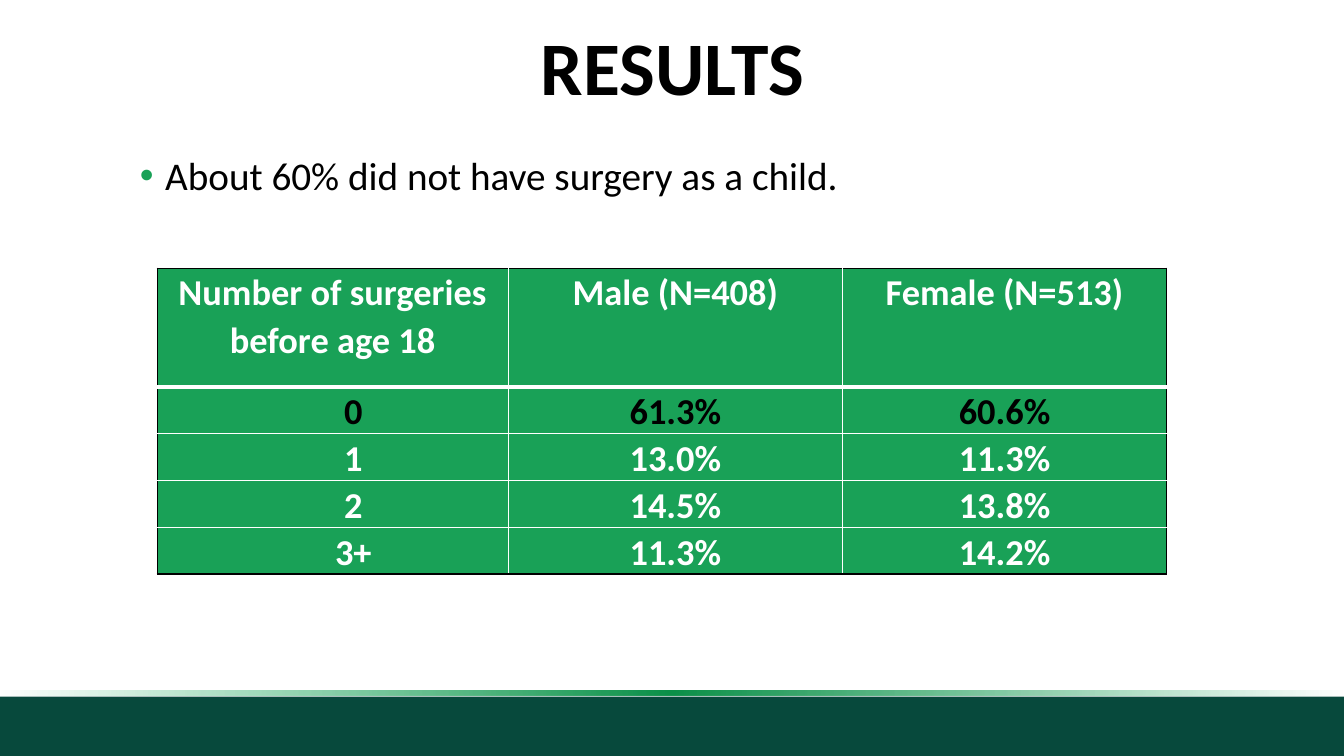
import pptx
import pptx.util
import pptx.dml.color
import pptx.enum.shapes
import pptx.enum.text
import pptx.oxml
import pptx.oxml.ns

Inches = pptx.util.Inches
Pt = pptx.util.Pt
NS = pptx.oxml.ns.nsdecls("a")
GREEN, BLACK, WHITE = "19A157", "000000", "FFFFFF"


def rgb(value):
    return pptx.dml.color.RGBColor.from_string(value)


def write(tf, text, size=28, color=BLACK, bold=False, align=None, spacing=0.9, bullet=None):
    p = tf.paragraphs[0]
    p.alignment = align
    p.line_spacing = spacing
    p.space_before = Pt(0)
    if bullet:
        pPr = p._p.get_or_add_pPr()
        pPr.set("marL", str(Inches(0.25)))
        pPr.set("indent", str(-Inches(0.25)))
        for xml in (f'<a:buClr {NS}><a:srgbClr val="{bullet}"/></a:buClr>',
                    f'<a:buFont {NS} typeface="Arial"/>',
                    f'<a:buChar {NS} char="•"/>'):
            pPr.append(pptx.oxml.parse_xml(xml))
    r = p.add_run()
    r.text = text
    r.font.name = "Calibri"
    r.font.size = Pt(size)
    r.font.bold = bold
    r.font.color.rgb = rgb(color)


prs = pptx.Presentation()
prs.slide_width = Inches(13.33)
prs.slide_height = Inches(7.5)
s = prs.slides.add_slide(prs.slide_layouts[5])
center = pptx.enum.text.PP_ALIGN.CENTER

# Footer band and the glowing strip above it
bands = []
for top, height in ((6.91, 0.59), (6.85, 0.05)):
    sp = s.shapes.add_shape(pptx.enum.shapes.MSO_SHAPE.RECTANGLE,
                            Inches(0), Inches(top), Inches(13.33), Inches(height))
    sp.shadow.inherit = False
    sp.line.fill.background()
    bands.append(sp)
footer, strip = bands
footer.fill.solid()
footer.fill.fore_color.rgb = rgb("07493C")
strip.fill.gradient()
strip.fill.gradient_angle = 180
stops = strip._element.spPr.find(pptx.oxml.ns.qn("a:gradFill")).find(pptx.oxml.ns.qn("a:gsLst"))
for stop in list(stops):
    stops.remove(stop)
for pos, color, alpha in ((0, "0D9D4F", 0), (50, "0C9049", 100), (100, "0FAB56", 0)):
    stops.append(pptx.oxml.parse_xml(
        f'<a:gs {NS} pos="{pos * 1000}"><a:srgbClr val="{color}">'
        f'<a:alpha val="{alpha * 1000}"/></a:srgbClr></a:gs>'))

# Title
title = s.shapes.title
title.left, title.top = Inches(0.92), Inches(0.11)
title.width, title.height = Inches(11.5), Inches(1.19)
title.text_frame.vertical_anchor = pptx.enum.text.MSO_ANCHOR.MIDDLE
title.text_frame.auto_size = pptx.enum.text.MSO_AUTO_SIZE.NONE
write(title.text_frame, "RESULTS", size=54, bold=True, align=center)

# Key finding
body = s.shapes.add_textbox(Inches(1.29), Inches(1.5), Inches(12.94), Inches(4.98))
body.text_frame.word_wrap = True
write(body.text_frame, "About 60% did not have surgery as a child.", bullet=GREEN)

# Surgery table
rows = [
    ("Number of surgeries before age 18", "Male (N=408)", "Female (N=513)"),
    ("0", "61.3%", "60.6%"),
    ("1", "13.0%", "11.3%"),
    ("2", "14.5%", "13.8%"),
    ("3+", "11.3%", "14.2%"),
]
last_row, last_col = len(rows) - 1, len(rows[0]) - 1
table = s.shapes.add_table(len(rows), len(rows[0]), Inches(1.56), Inches(2.66),
                           Inches(10.01), Inches(3.02)).table
table.first_row = table.horz_banding = False
for col, width in zip(table.columns, (3.48, 3.32, 3.21)):
    col.width = Inches(width)
for i, values in enumerate(rows):
    table.rows[i].height = Inches(0.46 if i else 1.18)
    for j, text in enumerate(values):
        cell = table.cell(i, j)
        # Counts sit a little right of the column centre
        cell.margin_left = Inches(0.59 if i and j == 0 else 0.18)
        cell.margin_right = Inches(0.18)
        cell.margin_top = cell.margin_bottom = 0
        # Black outer edges, white inner lines, thick rule under the header
        edges = (("L", j == 0, 1), ("R", j == last_col, 1),
                 ("T", i == 0, 3 if i == 1 else 1), ("B", i == last_row, 3 if i == 0 else 1))
        for side, outer, width in edges:
            cell._tc.get_or_add_tcPr().append(pptx.oxml.parse_xml(
                f'<a:ln{side} {NS} w="{Pt(width)}"><a:solidFill>'
                f'<a:srgbClr val="{BLACK if outer else WHITE}"/></a:solidFill></a:ln{side}>'))
        cell.fill.solid()
        cell.fill.fore_color.rgb = rgb(GREEN)
        write(cell.text_frame, text, size=26, color=BLACK if i == 1 else WHITE,
              bold=True, align=center, spacing=1.07)

prs.save("out.pptx")
